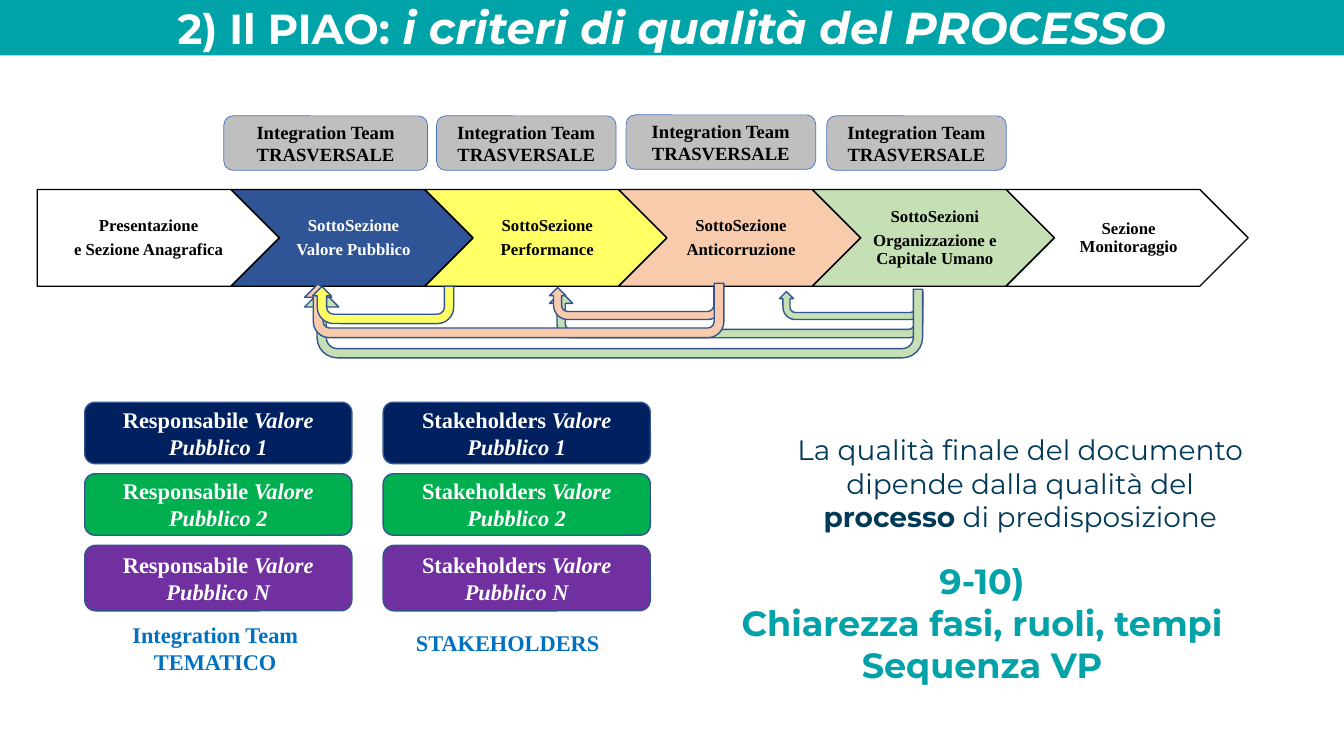
import pptx
import pptx.util
import pptx.dml.color
import pptx.enum.shapes
import pptx.enum.text

Inches = pptx.util.Inches
Pt = pptx.util.Pt
SHAPES = pptx.enum.shapes.MSO_SHAPE
ANCHOR = pptx.enum.text.MSO_ANCHOR
COLORS = {
    "white": "FFFFFF", "black": "000000", "teal": "00A3A8", "teal_text": "03A2A8",
    "petrol": "003A57", "blue": "2F5597", "yellow": "FFFF66", "peach": "F8CBAD",
    "sage": "C5E0B4", "outline": "325491", "navy": "002060", "green": "00B050",
    "purple": "7030A0", "caption": "0070C0", "gray": "BFBFBF", "team_line": "4472C4",
}
COLORS = {name: pptx.dml.color.RGBColor.from_string(value) for name, value in COLORS.items()}


def write_text(shape, paragraphs, color, size, font="Times New Roman", bold=True,
               margins=(0.1, 0.05, 0.1, 0.05), anchor=ANCHOR.MIDDLE, wrap=True, spacing=None):
    frame = shape.text_frame
    frame.word_wrap = wrap
    frame.vertical_anchor = anchor
    for side, margin in zip(("left", "top", "right", "bottom"), margins):
        setattr(frame, f"margin_{side}", Inches(margin))
    for index, runs in enumerate(paragraphs):
        paragraph = frame.paragraphs[0] if index == 0 else frame.add_paragraph()
        paragraph.alignment = pptx.enum.text.PP_ALIGN.CENTER
        for name, value in (spacing or {}).items():
            setattr(paragraph, name, value)
        for text, changes in runs:
            run = paragraph.add_run()
            run.text = text
            run.font.color.rgb = COLORS[color]
            settings = {"name": font, "size": Pt(size), "bold": bold, "italic": False}
            for name, value in (settings | changes).items():
                setattr(run.font, name, value)


def add_shape(kind, left, top, width, height, fill, line=None, line_width=1):
    shape = slide.shapes.add_shape(kind, Inches(left), Inches(top), Inches(width), Inches(height))
    shape.shadow.inherit = False
    shape.fill.solid()
    shape.fill.fore_color.rgb = COLORS[fill]
    if line:
        shape.line.color.rgb = COLORS[line]
        shape.line.width = Pt(line_width)
    else:
        shape.line.fill.background()
    return shape


presentation = pptx.Presentation()
presentation.slide_width = Inches(13.33)
presentation.slide_height = Inches(7.5)
slide = presentation.slides.add_slide(presentation.slide_layouts[6])

phases = [
    ("white", "black", ["Presentazione", "e Sezione Anagrafica"]),
    ("blue", "white", ["SottoSezione", "Valore Pubblico"]),
    ("yellow", "black", ["SottoSezione", "Performance"]),
    ("peach", "black", ["SottoSezione", "Anticorruzione"]),
    ("sage", "black", ["SottoSezioni", "Organizzazione e Capitale Umano"]),
    ("white", "black", ["Sezione Monitoraggio"]),
]
for index, (fill, color, lines) in enumerate(phases):
    kind = SHAPES.CHEVRON if index else SHAPES.PENTAGON
    phase = add_shape(kind, 0.37 + 1.922 * index, 1.88, 2.4, 0.96, fill, "black")
    write_text(phase, [[(line, {})] for line in lines], color, 12,
               margins=(0.05 if index else 0.07, 0.04, 0.02, 0.04),
               spacing={"line_spacing": 0.9, "space_after": Pt(4.2)})

thin_bend = (0.25, 0.25, 0.25, 0.438, 0.992)
wide_bend = (0.179, 0.25, 0.25, 0.296, 0.992)
long_bend = (0.135, 0.25, 0.25, 0.296, 0.992)
feedback_arrows = [
    (7.73, 2.89, 1.42, 0.28, "sage", thin_bend),
    (5.45, 2.89, 3.7, 0.46, "sage", wide_bend),
    (3.02, 2.87, 6.13, 0.68, "sage", long_bend),
    (5.45, 2.85, 1.71, 0.32, "peach", thin_bend),
    (3.02, 2.81, 4.16, 0.54, "peach", wide_bend),
    (3.1, 2.84, 1.4, 0.37, "yellow", thin_bend),
]
for left, top, width, height, fill, bend in feedback_arrows:
    arrow = add_shape(SHAPES.U_TURN_ARROW, left, top, width, height, fill, "outline")
    arrow.rotation = 180
    for index, value in enumerate(bend):
        arrow.adjustments[index] = value

value_rows = [("1", "navy", 3.99, 0.61), ("2", "green", 4.7, 0.61), ("N", "purple", 5.41, 0.65)]
for role, left in (("Responsabile ", 0.84), ("Stakeholders ", 3.8)):
    for number, fill, top, height in value_rows:
        box = add_shape(SHAPES.ROUNDED_RECTANGLE, left, top, 2.65, height, fill, "outline")
        write_text(box, [[(role, {}), (f"Valore Pubblico {number}", {"italic": True})]],
                   "white", 16)

for left, top, width in ((2.22, 1.15, 2.02), (4.33, 1.15, 1.78), (6.21, 1.14, 1.88), (8.2, 1.15, 1.78)):
    team = add_shape(SHAPES.ROUNDED_RECTANGLE, left, top, width, 0.54, "gray", "team_line", 0.5)
    write_text(team, [[("Integration Team", {})], [("TRASVERSALE", {})]], "black", 13.3)

quality = [("La qualità finale del documento dipende dalla qualità del ", {}),
           ("processo", {"bold": True}), (" di predisposizione", {})]
criteria = ["9-10)", "Chiarezza fasi, ruoli, tempi", "Sequenza VP"]
texts = [
    ((0.61, 6.11, 3.05, 0.64), [[("Integration Team", {})], [("TEMATICO", {})]],
     {"color": "caption", "size": 16}),
    ((3.51, 6.35, 3.05, 0.25), [[("STAKEHOLDERS", {})]],
     {"color": "caption", "size": 16, "spacing": {"line_spacing": Pt(8.1)}}),
    ((7.73, 4.16, 4.78, 1.28), [quality],
     {"color": "petrol", "size": 20, "font": "Montserrat", "bold": False,
      "margins": (0.13, 0.13, 0.13, 0.13)}),
    ((7.19, 5.48, 5.1, 1.4), [[(line, {})] for line in criteria],
     {"color": "teal_text", "size": 25, "font": "Montserrat",
      "margins": (0.13, 0.07, 0.13, 0.07), "wrap": False}),
]
for position, paragraphs, settings in texts:
    text_box = slide.shapes.add_textbox(*map(Inches, position))
    write_text(text_box, paragraphs, anchor=ANCHOR.TOP, **settings)

title = add_shape(SHAPES.RECTANGLE, 0, -0.03, 13.33, 0.58, "teal")
write_text(title, [[("2) Il PIAO:", {}),
                    (" i criteri di qualità del PROCESSO", {"size": Pt(32), "italic": True})]],
           "white", 30, font="Montserrat")

presentation.save("out.pptx")
